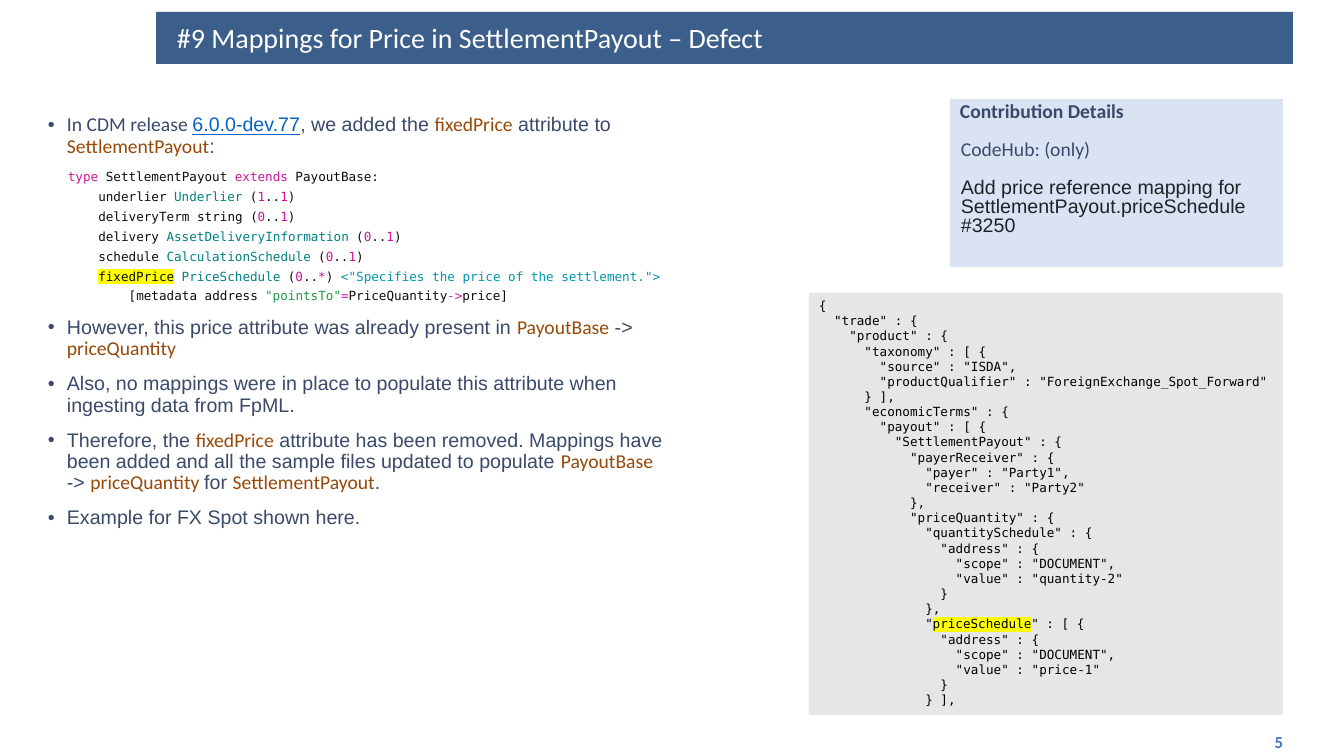
from lxml import etree
from pptx import Presentation
from pptx import util as u
from pptx.dml.color import RGBColor
from pptx.enum import shapes, text
from pptx.oxml.ns import qn

PX = 914400 / 100.8
HUE = {
    "bar": "3B5E8A", "white": "FFFFFF", "navy": "3A4A6A", "link": "0563C1",
    "brown": "984807", "pink": "CC1598", "dark": "0D0D0D", "teal": "008080",
    "cyan": "0096AD", "green": "23974A", "blue": "4472C4", "pale": "DAE3F3",
    "ink": "1F2328", "gray": "E7E6E6", "black": "000000", "mark": "FFFF00",
}
SANS, BODY, MONO = "Calibri", "Arial", "DejaVu Sans Mono"

deck = Presentation()
deck.slide_width = u.Emu(round(1344 * PX))
deck.slide_height = u.Emu(round(756 * PX))
slide = deck.slides.add_slide(deck.slide_layouts[6])


def box(left, top, width, height, fill=None, anchor=text.MSO_ANCHOR.TOP):
    spot = [u.Emu(round(n * PX)) for n in (left, top, width, height)]
    if fill:
        shape = slide.shapes.add_shape(shapes.MSO_SHAPE.RECTANGLE, *spot)
        shape.shadow.inherit = False
        shape.fill.solid()
        shape.fill.fore_color.rgb = RGBColor.from_string(HUE[fill])
        shape.line.fill.background()
    else:
        shape = slide.shapes.add_textbox(*spot)
    frame = shape.text_frame
    frame.word_wrap = True
    frame.vertical_anchor = anchor
    return frame


def write(frame, parts, size, face, tone, gap=0, lead=None, left=0, bullet=False):
    first = not frame.paragraphs[0].runs
    para = frame.paragraphs[0] if first else frame.add_paragraph()
    para.alignment = text.PP_ALIGN.LEFT
    para.space_before = u.Pt(0 if first else gap)
    if lead:
        para.line_spacing = lead
    props = para._p.get_or_add_pPr()
    props.set("marL", str(round(left * PX)))
    props.set("indent", str(round(-left * PX) if bullet else 0))
    if bullet:
        etree.SubElement(props, qn("a:buFont")).set("typeface", "Arial")
        etree.SubElement(props, qn("a:buChar")).set("char", "•")
    para.font.size = u.Pt(size)
    para.font.name = face
    para.font.color.rgb = RGBColor.from_string(HUE[tone])
    for words, look in parts:
        if words == "\n":
            para.add_line_break()
            continue
        run = para.add_run()
        run.text = words
        if look in ("brown", "navy"):
            run.font.name = SANS
        if look == "link":
            run.font.underline = True
        if look == "mark":
            run.font.color.rgb = RGBColor.from_string(HUE[tone])
            glow = etree.Element(qn("a:highlight"))
            etree.SubElement(glow, qn("a:srgbClr")).set("val", HUE["mark"])
            run.font._element.find(qn("a:solidFill")).addnext(glow)
        elif look:
            run.font.color.rgb = RGBColor.from_string(HUE[look])
    return para


MID = text.MSO_ANCHOR.MIDDLE
box(156, 12, 1137, 52, "bar")
title = box(167, 18, 1092, 42, anchor=MID)
write(title, [("#9 Mappings for Price in SettlementPayout – Defect", None)],
      20, SANS, "white", lead=0.9)

fields = [
    ("underlier", "Underlier", "teal", "1", "1", None),
    ("deliveryTerm", "string", "dark", "0", "1", None),
    ("delivery", "AssetDeliveryInformation", "teal", "0", "1", None),
    ("schedule", "CalculationSchedule", "teal", "0", "1", None),
    ("fixedPrice", "PriceSchedule", "teal", "0", "*", "mark"),
]
code = [("type ", "pink"), ("SettlementPayout ", None),
        ("extends ", "pink"), ("PayoutBase:", None)]
for name, kind, tone, low, high, look in fields:
    code += [("\n", None), ("    ", None), (name, look), (" ", None), (kind, tone),
             (" (", None), (low, "pink"), ("..", None), (high, "pink"), (")", None)]
code += [(' <"Specifies the price of the settlement.">', "cyan"), ("\n", None),
         ("        [metadata address ", None), ('"pointsTo"', "green"),
         ("=", "pink"), ("PriceQuantity", None), ("->", "pink"), ("price]", None)]

points = [
    [("In CDM release ", "navy"), ("6.0.0-dev.77", "link"), (", we added the ", None),
     ("fixedPrice", "brown"), (" attribute to ", None),
     ("SettlementPayout", "brown"), (":", None)],
    [("However, this price attribute was already present in ", None),
     ("PayoutBase", "brown"), (" -> ", None), ("priceQuantity", "brown")],
    [("Also, no mappings were in place to populate this attribute when "
      "ingesting data from FpML.", None)],
    [("Therefore, the ", None), ("fixedPrice", "brown"),
     (" attribute has been removed. Mappings have been added and all the "
      "sample files updated to populate ", None),
     ("PayoutBase", "brown"), (" -> ", None), ("priceQuantity ", "brown"),
     ("for ", None), ("SettlementPayout", "brown"), (".", None)],
    [("Example for FX Spot shown here.", None)],
]
body = box(38, 110, 646, 582)
for spot, parts in enumerate(points):
    write(body, parts, 14, BODY, "navy", 10, 0.9, 19, True)
    if spot == 0:
        write(body, code, 9, MONO, "dark", 5, u.Pt(14.2), 20)

foot = box(991, 727, 302, 29, anchor=MID)
page = write(foot, [("5", None)], 12, SANS, "blue")
page.alignment = text.PP_ALIGN.RIGHT
page.font.bold = True

card = box(950, 99, 333, 168, "pale")
lead = u.Pt(13.5)
head = write(card, [("Contribution Details", None)], 14, SANS, "navy", lead=lead)
head.font.bold = True
for words, face, tone, gap in [
    ("CodeHub: (only)", SANS, "navy", 13.5),
    ("Add price reference mapping for SettlementPayout.priceSchedule", BODY, "ink", 13.5),
    ("#3250", BODY, "ink", 0),
]:
    write(card, [(words, None)], 14, face, tone, gap, lead, 1)

sample = """{
  "trade" : {
    "product" : {
      "taxonomy" : [ {
        "source" : "ISDA",
        "productQualifier" : "ForeignExchange_Spot_Forward"
      } ],
      "economicTerms" : {
        "payout" : [ {
          "SettlementPayout" : {
            "payerReceiver" : {
              "payer" : "Party1",
              "receiver" : "Party2"
            },
            "priceQuantity" : {
              "quantitySchedule" : {
                "address" : {
                  "scope" : "DOCUMENT",
                  "value" : "quantity-2"
                }
              },
              "priceSchedule" : [ {
                "address" : {
                  "scope" : "DOCUMENT",
                  "value" : "price-1"
                }
              } ],"""
panel = box(809, 293, 474, 422, "gray")
for line in sample.splitlines():
    start, word, rest = line.partition("priceSchedule")
    parts = [(start, None), (word, "mark"), (rest, None)]
    write(panel, [part for part in parts if part[0]], 9, MONO, "black")

deck.save("out.pptx")
